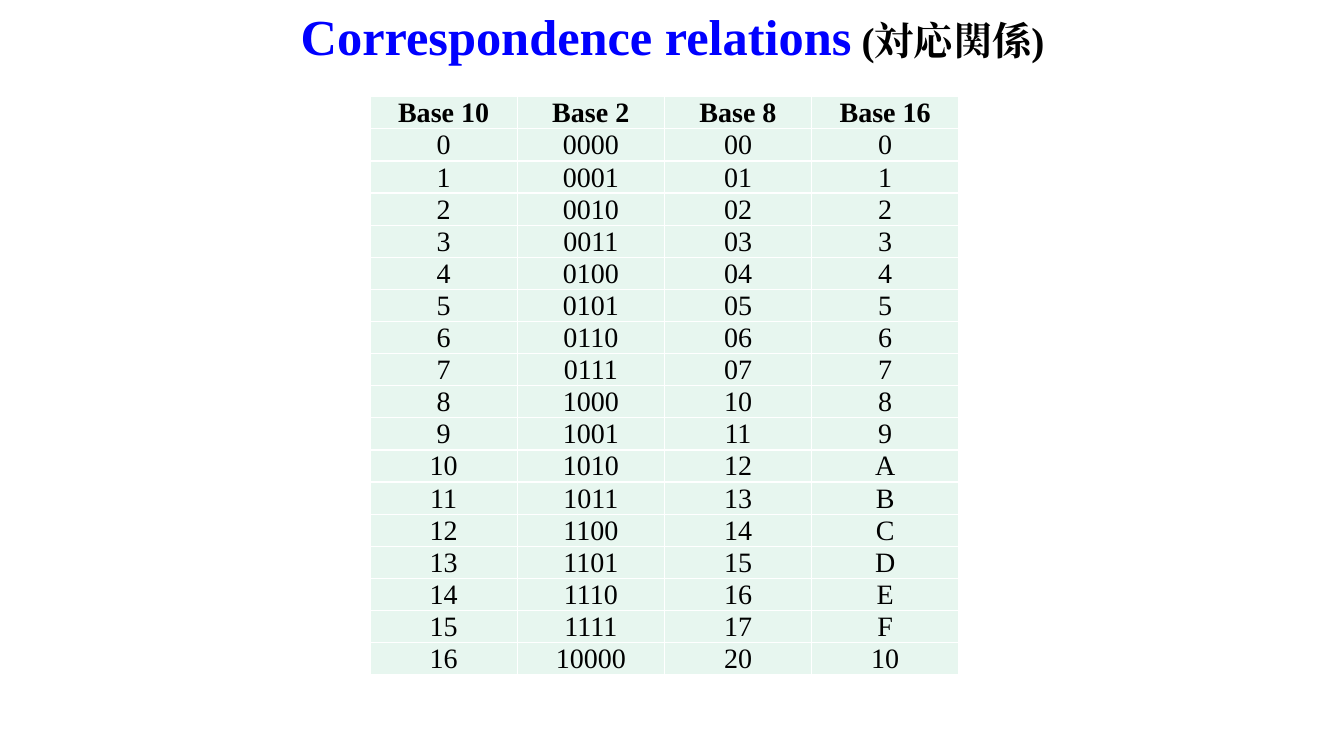
from lxml import etree
from pptx import Presentation
from pptx.dml.color import RGBColor
from pptx.enum.text import MSO_ANCHOR, PP_ALIGN
from pptx.oxml.ns import qn
from pptx.util import Inches, Pt

FONT = "Times New Roman"
COLORS = {"title": "0000FF", "text": "000000", "cell": "E7F6EF", "border": "FFFFFF"}
HEADERS = ["Base 10", "Base 2", "Base 8", "Base 16"]
FORMATS = ["d", "04b", "02o", "X"]
LAST_NUMBER = 16
COL_WIDTH, ROW_HEIGHT = Inches(1.46), Inches(0.25)


def add_run(p, text, size=20, color="text", bold=False):
    r = p.add_run()
    r.text = text
    r.font.name = FONT
    r.font.size = Pt(size)
    r.font.bold = bold
    r.font.color.rgb = RGBColor.from_string(COLORS[color])
    # East Asian glyphs use the same font
    etree.SubElement(r.font._element, qn("a:ea"), typeface=FONT)


def add_borders(cell):
    tc_pr = cell._tc.get_or_add_tcPr()
    for i, side in enumerate(("lnL", "lnR", "lnT", "lnB")):
        line = etree.Element(qn(f"a:{side}"), w=str(Pt(1)))
        fill = etree.SubElement(line, qn("a:solidFill"))
        etree.SubElement(fill, qn("a:srgbClr"), val=COLORS["border"])
        tc_pr.insert(i, line)


def format_cell(cell, text, bold):
    cell.fill.solid()
    cell.fill.fore_color.rgb = RGBColor.from_string(COLORS["cell"])
    cell.margin_left = cell.margin_right = cell.margin_top = Inches(0.01)
    cell.margin_bottom = 0
    cell.vertical_anchor = MSO_ANCHOR.MIDDLE
    p = cell.text_frame.paragraphs[0]
    p.alignment = PP_ALIGN.CENTER
    add_run(p, text, bold=bold)
    add_borders(cell)


def add_title(s):
    title = s.shapes.title
    title.left, title.top = Inches(1.67), 0
    title.width, title.height = Inches(10), Inches(0.7)
    tf = title.text_frame
    tf.word_wrap = True
    tf.vertical_anchor = MSO_ANCHOR.MIDDLE
    p = tf.paragraphs[0]
    p.alignment = PP_ALIGN.CENTER
    add_run(p, "Correspondence relations", size=36, color="title", bold=True)
    add_run(p, " (対応関係)", size=28, bold=True)


def add_number_table(s):
    numbers = [[format(n, f) for f in FORMATS] for n in range(LAST_NUMBER + 1)]
    rows = [HEADERS] + numbers
    frame = s.shapes.add_table(len(rows), len(HEADERS), Inches(3.67), Inches(0.96),
                               COL_WIDTH * len(HEADERS), ROW_HEIGHT * len(rows))
    table = frame.table
    table.horz_banding = False
    for i, row in enumerate(rows):
        for j, text in enumerate(row):
            format_cell(table.cell(i, j), text, bold=i == 0)


def main():
    prs = Presentation()
    prs.slide_width, prs.slide_height = Inches(13.33), Inches(7.5)
    s = prs.slides.add_slide(prs.slide_layouts[5])
    add_title(s)
    add_number_table(s)
    prs.save("out.pptx")


if __name__ == "__main__":
    main()
